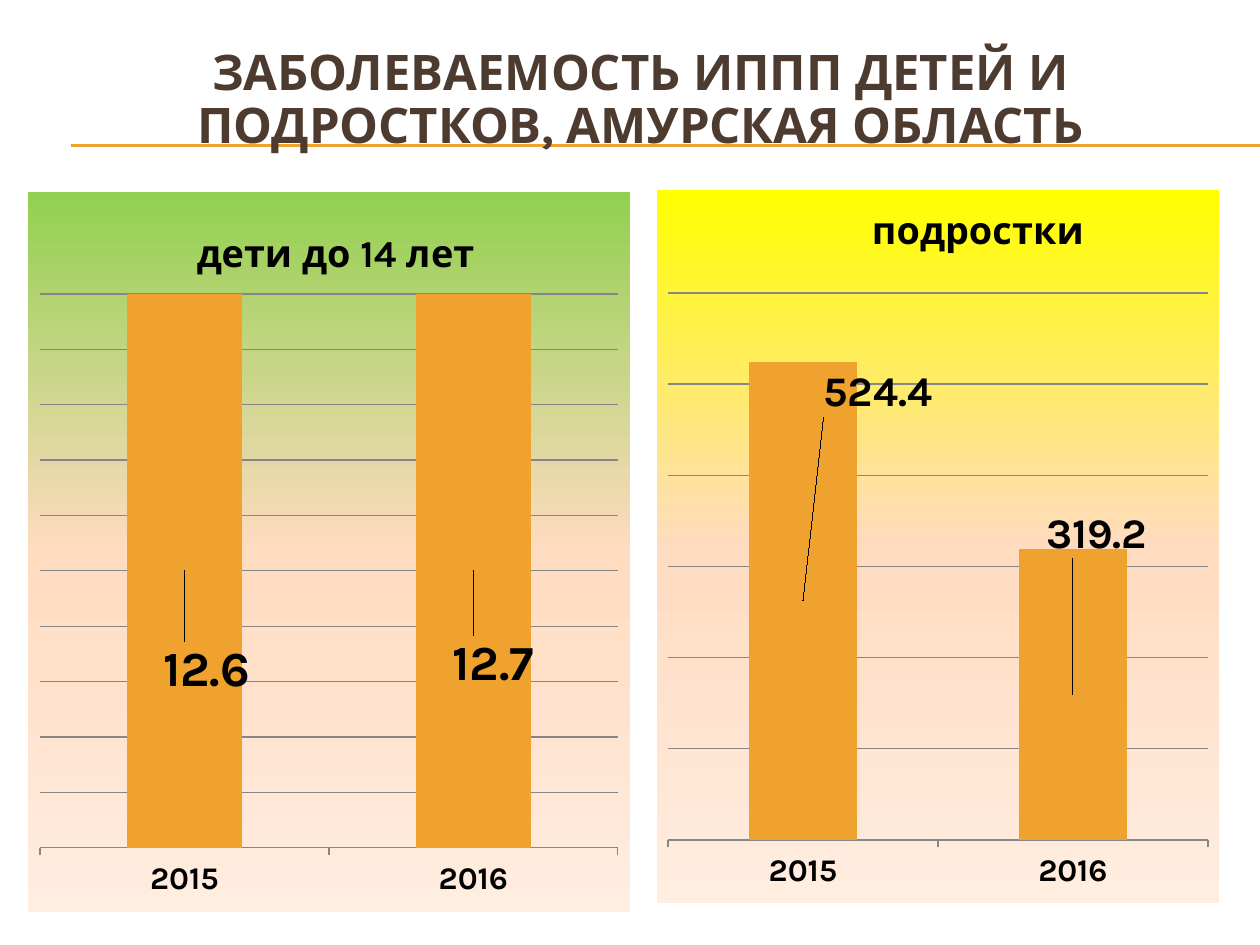
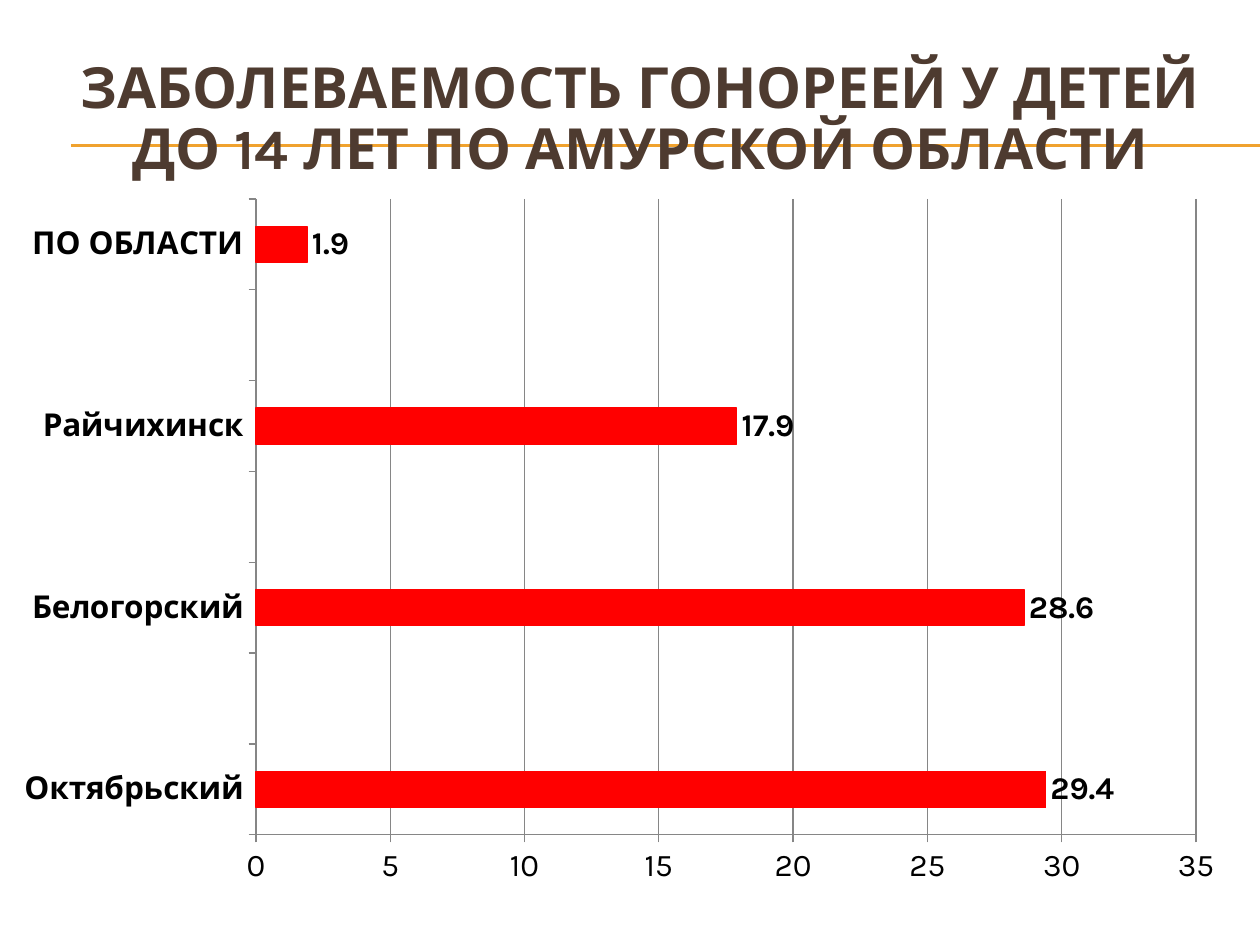
from dataclasses import dataclass

from lxml import etree
from pptx import Presentation, util as u
from pptx.chart.data import CategoryChartData
from pptx.dml.color import RGBColor
from pptx.enum import chart as ch, shapes, text
from pptx.oxml import parse_xml
from pptx.oxml.ns import nsdecls, qn


@dataclass(frozen=True)
class Theme:
    font: str = "Karla"
    title: str = "4E3B30"
    rule: str = "F0A22E"
    ink: str = "000000"
    grid: str = "868686"
    red: str = "FF0000"
    fade: tuple = ("FFDBC0", "FFEDE0")
    body: float = 18
    head: float = 21.6


T = Theme()
PX = 914400 / 126
SIZE = (1260, 945)
RULES = (71, (145, 146))  # left end, heights

# Content: boxes are left, top, width, height in px
YEARS = ["2015", "2016"]
SLIDES = [
    dict(
        title="ЗАБОЛЕВАЕМОСТЬ ИППП ДЕТЕЙ И ПОДРОСТКОВ, АМУРСКАЯ ОБЛАСТЬ",
        size=28, box=(42, 26, 1197, 151),
        charts=[
            dict(name="дети до 14 лет", kind="COLUMN_STACKED_100",
                 box=(28, 192, 602, 720), plot=(40, 294, 578, 554),
                 cats=YEARS, vals=[12.6, 12.7], color=T.rule, top="92D050",
                 label=28, head=(190, 221), shift=[(22, 99), (20, 93)]),
            dict(name="подростки", kind="COLUMN_STACKED",
                 box=(657, 190, 562, 713), plot=(668, 293, 540, 547),
                 cats=YEARS, vals=[524.4, 319.2], color=T.rule, top="FFFF00",
                 label=24, head=(865, 198), shift=[(75, -208), (24, -160)]),
        ],
    ),
    dict(
        title="ЗАБОЛЕВАЕМОСТЬ ГОНОРЕЕЙ У ДЕТЕЙ ДО 14 ЛЕТ ПО АМУРСКОЙ ОБЛАСТИ",
        size=32.4, box=(42, 63, 1197, 116),
        charts=[
            dict(name="Заболеваемость", kind="BAR_CLUSTERED",
                 box=(0, 184, 1239, 714), plot=(256, 199, 940, 636),
                 cats=["Октябрьский", "", "Белогорский", "", "Райчихинск", "",
                       "ПО ОБЛАСТИ"],
                 vals=[29.4, None, 28.6, None, 17.9, None, 1.9],
                 color=T.red, label=T.body),
        ],
    ),
]


def px(*nums):
    return [u.Emu(round(n * PX)) for n in nums]


def rgb(code):
    return RGBColor.from_string(code)


def style(font, size, color=T.ink, bold=True):
    font.name, font.size, font.bold = T.font, u.Pt(size), bold
    font.color.rgb = rgb(color)


def place(part, spot, **vals):
    """Give a chart part a manual layout at child index spot."""
    for old in part.findall(qn("c:layout")):
        part.remove(old)
    node = parse_xml(f"<c:layout {nsdecls('c')}><c:manualLayout/></c:layout>")
    for tag, val in vals.items():
        etree.SubElement(node[0], qn("c:" + tag)).set("val", str(val))
    part.insert(spot, node)


def share(box, x, y):
    return dict(x=round(x / box[2], 4), y=round(y / box[3], 4))


def fade(root, top):
    """Fill the chart area with a downward gradient."""
    stops = "".join(
        f'<a:gs pos="{i * 50000}"><a:srgbClr val="{c}"/></a:gs>'
        for i, c in enumerate((top, *T.fade)))
    root.find(qn("c:chart")).addnext(parse_xml(
        f"<c:spPr {nsdecls('c', 'a')}><a:gradFill><a:gsLst>{stops}</a:gsLst>"
        '<a:lin ang="5400000" scaled="0"/></a:gradFill>'
        "<a:ln><a:noFill/></a:ln></c:spPr>"))


def add_rules(slide):
    left, tops = RULES
    for y in tops:
        line = slide.shapes.add_connector(
            shapes.MSO_CONNECTOR.STRAIGHT, *px(left, y, SIZE[0], y))
        line.line.color.rgb = rgb(T.rule)
        line.line.width = u.Pt(0.75)
        etree.SubElement(line.element.spPr, qn("a:effectLst"))


def add_title(slide, page):
    frame = slide.shapes.add_textbox(*px(*page["box"])).text_frame
    frame.word_wrap = True
    frame.vertical_anchor = text.MSO_ANCHOR.MIDDLE
    para = frame.paragraphs[0]
    para.alignment = text.PP_ALIGN.CENTER
    para.line_spacing = 0.9
    run = para.add_run()
    run.text = page["title"]
    style(run.font, page["size"], T.title)


def add_chart(slide, c):
    data = CategoryChartData()
    data.categories = c["cats"]
    data.add_series(c["name"], c["vals"])
    box = c["box"]
    chart = slide.shapes.add_chart(
        ch.XL_CHART_TYPE[c["kind"]], *px(*box), data).chart
    root = chart.element
    style(chart.font, T.body, bold=False)
    chart.has_legend = False
    stacked = "top" in c

    # Bars and values
    plot = chart.plots[0]
    plot.vary_by_categories = False
    plot.gap_width = 150
    plot.overlap = 100 if stacked else 0
    bars = plot.series[0]
    bars.format.fill.solid()
    bars.format.fill.fore_color.rgb = rgb(c["color"])
    labels = bars.data_labels
    labels.show_value = True
    style(labels.font, c["label"])
    if not stacked:
        bars.format.line.color.rgb = rgb(c["color"])
        bars.format.line.width = u.Pt(0.75)
        labels.position = ch.XL_LABEL_POSITION.OUTSIDE_END

    # Axes
    for axis in (chart.category_axis, chart.value_axis):
        axis.major_tick_mark = ch.XL_TICK_MARK.OUTSIDE
        axis.minor_tick_mark = ch.XL_TICK_MARK.NONE
        axis.format.line.color.rgb = rgb(T.grid)
    style(chart.category_axis.tick_labels.font, T.body)
    chart.value_axis.visible = not stacked
    chart.value_axis.has_major_gridlines = True
    chart.value_axis.major_gridlines.format.line.color.rgb = rgb(T.grid)

    # Plot frame
    x, y, wide, high = c["plot"]
    place(next(root.iter(qn("c:plotArea"))), 0, layoutTarget="inner",
          xMode="edge", yMode="edge", **share(box, x - box[0], y - box[1]),
          w=round(wide / box[2], 4), h=round(high / box[3], 4))

    # Heading, background and moved labels
    chart.has_title = stacked
    if stacked:
        run = chart.chart_title.text_frame.paragraphs[0].add_run()
        run.text = c["name"]
        style(run.font, T.head)
        x, y = c["head"]
        place(next(root.iter(qn("c:title"))), 1, xMode="edge", yMode="edge",
              **share(box, x - box[0], y - box[1]))
        fade(root, c["top"])
        for i in range(len(c["vals"])):
            style(bars.points[i].data_label.font, c["label"])
        for tag, move in zip(root.iter(qn("c:dLbl")), c["shift"]):
            place(tag, 1, **share(box, *move))


def main():
    deck = Presentation()
    deck.slide_width, deck.slide_height = px(*SIZE)
    for page in SLIDES:
        slide = deck.slides.add_slide(deck.slide_layouts[6])
        add_rules(slide)
        add_title(slide, page)
        for c in page["charts"]:
            add_chart(slide, c)
    deck.save("out.pptx")


if __name__ == "__main__":
    main()
